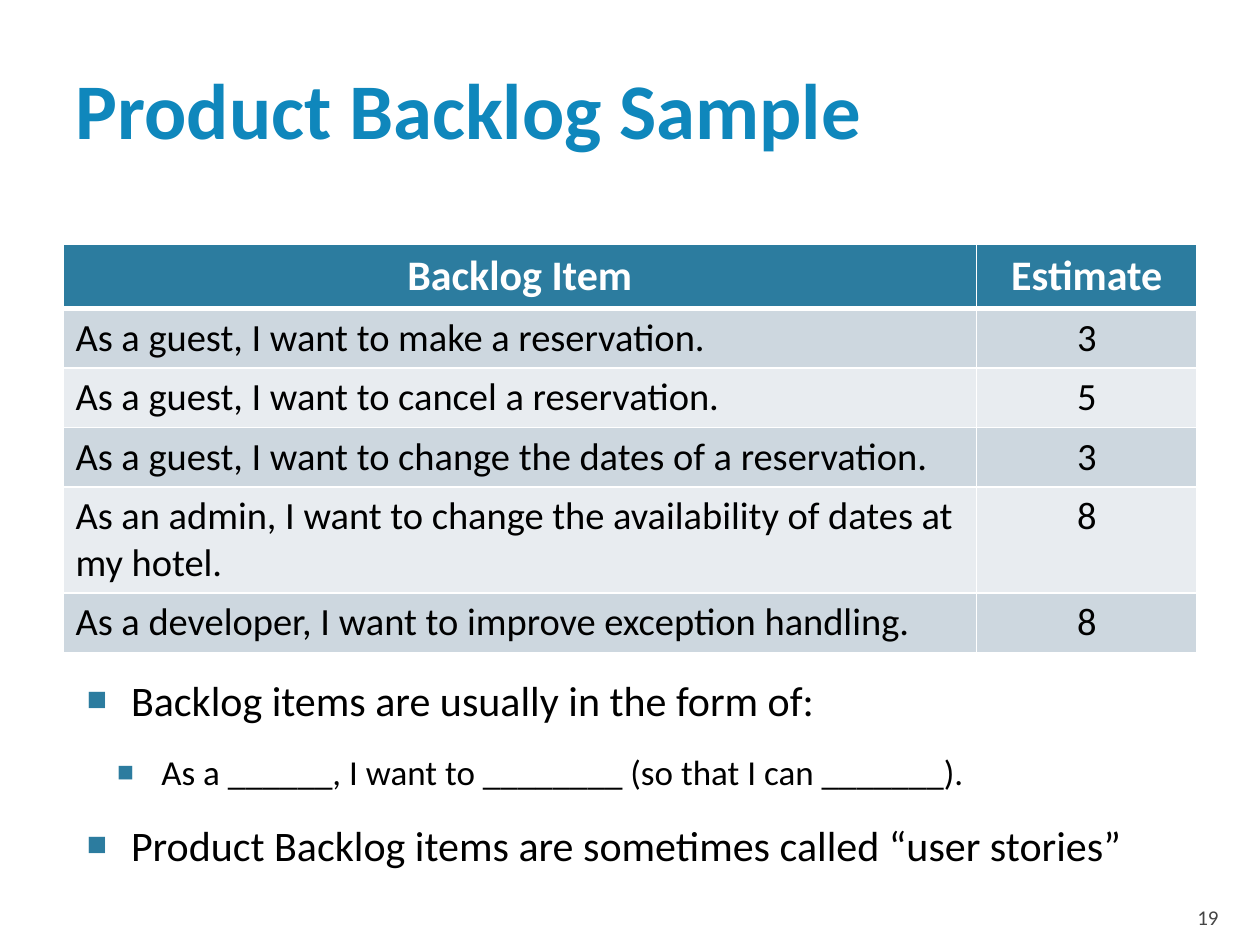
from lxml import etree
from pptx import Presentation
from pptx.dml.color import RGBColor
from pptx.enum.text import MSO_ANCHOR, MSO_AUTO_SIZE, PP_ALIGN
from pptx.oxml import parse_xml
from pptx.oxml.ns import nsdecls, qn
from pptx.util import Inches, Pt

LEFT, CENTER, RIGHT = PP_ALIGN.LEFT, PP_ALIGN.CENTER, PP_ALIGN.RIGHT
MIDDLE, BOTTOM = MSO_ANCHOR.MIDDLE, MSO_ANCHOR.BOTTOM
NO_FIT = MSO_AUTO_SIZE.NONE

COLORS = {
    "title": "0F87BC", "accent": "2C7C9F", "band_dark": "CDD7DF",
    "band_light": "E8ECF0", "white": "FFFFFF", "text": "000000",
    "number": "454545",
}
BACKLOG = [
    ("As a guest, I want to make a reservation.", "3"),
    ("As a guest, I want to cancel a reservation.", "5"),
    ("As a guest, I want to change the dates of a reservation.", "3"),
    ("As an admin, I want to change the availability of dates at my hotel.", "8"),
    ("As a developer, I want to improve exception handling.", "8"),
]
NOTES = [
    (0, "Backlog items are usually in the form of:"),
    (1, "As a ______, I want to ________ (so that I can _______)."),
    (0, "Product Backlog items are sometimes called “user stories”"),
]


class SlideBuilder:
    font = "Calibri"
    bullet_levels = [(0.48, 24), (0.72, 20)]  # text indent in inches, size

    def __init__(self, prs):
        self.prs = prs
        self.slide = prs.slides.add_slide(prs.slide_layouts[1])

    def box(self, x, y, w, h):
        """Turn percentages of the slide's size into lengths."""
        width, height = self.prs.slide_width, self.prs.slide_height
        return [int(share * full / 100) for share, full in
                ((x, width), (y, height), (w, width), (h, height))]

    def place(self, sp, area, margins):
        sp.left, sp.top, sp.width, sp.height = self.box(*area)
        tf = sp.text_frame
        tf.word_wrap = True
        tf.auto_size = NO_FIT
        (tf.margin_left, tf.margin_top,
         tf.margin_right, tf.margin_bottom) = map(Inches, margins)
        return tf

    def style(self, p, size, color, bold=False, align=LEFT):
        p.alignment = align
        for r in p.runs:
            r.font.name = self.font
            r.font.size = Pt(size)
            r.font.bold = bold
            r.font.color.rgb = RGBColor.from_string(COLORS[color])

    def title(self, text, area):
        tf = self.place(self.slide.shapes.title, area, (0.1, 0.05, 0.05, 0.05))
        tf.vertical_anchor = MIDDLE
        tf.text = text
        self.style(tf.paragraphs[0], 45, "title", bold=True)

    def bullets(self, items, area):
        tf = self.place(self.slide.placeholders[1], area, (0.06, 0.1, 0.1, 0.05))
        tf.text = "\n".join(text for _, text in items)
        for p, (level, _) in zip(tf.paragraphs, items):
            indent, size = self.bullet_levels[level]
            p.level = level
            p.space_before = Pt(15)
            self.style(p, size, "text")
            self.square_bullet(p, indent)

    def square_bullet(self, p, indent):
        pPr = p._p.get_or_add_pPr()
        pPr.set("marL", str(Inches(indent)))
        pPr.set("indent", str(Inches(-0.35)))
        color = etree.SubElement(pPr, qn("a:buClr"))
        etree.SubElement(color, qn("a:srgbClr"), val=COLORS["accent"])
        etree.SubElement(pPr, qn("a:buSzPct"), val="80000")
        etree.SubElement(pPr, qn("a:buFont"), typeface="Arial")
        etree.SubElement(pPr, qn("a:buChar"), char="■")

    def table(self, header, rows, area, col_widths):
        row_count = len(rows) + 1
        frame = self.slide.shapes.add_table(row_count, len(header), *self.box(*area))
        table = frame.table
        for column, width in zip(table.columns, col_widths):
            column.width = self.box(width, 0, 0, 0)[0]
        for i, row in enumerate([header, *rows]):
            for j, text in enumerate(row):
                cell = table.cell(i, j)
                cell.text = text
                p = cell.text_frame.paragraphs[0]
                if i == 0:
                    self.style(p, 24, "white", bold=True, align=CENTER)
                    fill = "accent"
                else:
                    self.style(p, 22, "text", align=CENTER if j else LEFT)
                    fill = "band_dark" if i % 2 else "band_light"
                cell.fill.solid()
                cell.fill.fore_color.rgb = RGBColor.from_string(COLORS[fill])
                self.borders(cell, top=3 if i == 1 else 1, bottom=3 if i == 0 else 1)

    def borders(self, cell, top, bottom):
        tcPr = cell._tc.get_or_add_tcPr()
        sides = (("L", 1), ("R", 1), ("T", top), ("B", bottom))
        for i, (side, width) in enumerate(sides):
            tcPr.insert(i, parse_xml(
                f'<a:ln{side} {nsdecls("a")} w="{Pt(width)}"><a:solidFill>'
                f'<a:srgbClr val="{COLORS["white"]}"/></a:solidFill></a:ln{side}>'))

    def slide_number(self, text, area):
        sp = self.slide.shapes.add_textbox(*self.box(*area))
        tf = self.place(sp, area, (0.1, 0.05, 0.1, 0))
        tf.vertical_anchor = BOTTOM
        tf.text = text
        self.style(tf.paragraphs[0], 12, "number", align=RIGHT)


def main():
    prs = Presentation()
    prs.slide_width, prs.slide_height = Inches(10), Inches(7.5)
    s = SlideBuilder(prs)
    s.title("Product Backlog Sample", (5, 2.27, 90, 18.27))
    s.slide_number("19", (89.7, 94.4, 8, 4))
    s.table(("Backlog Item", "Estimate"), BACKLOG, (5, 25.87, 90, 32.8), (72.5, 17.5))
    s.bullets(NOTES, (5, 70, 90, 23.33))
    prs.save("out.pptx")


if __name__ == "__main__":
    main()
